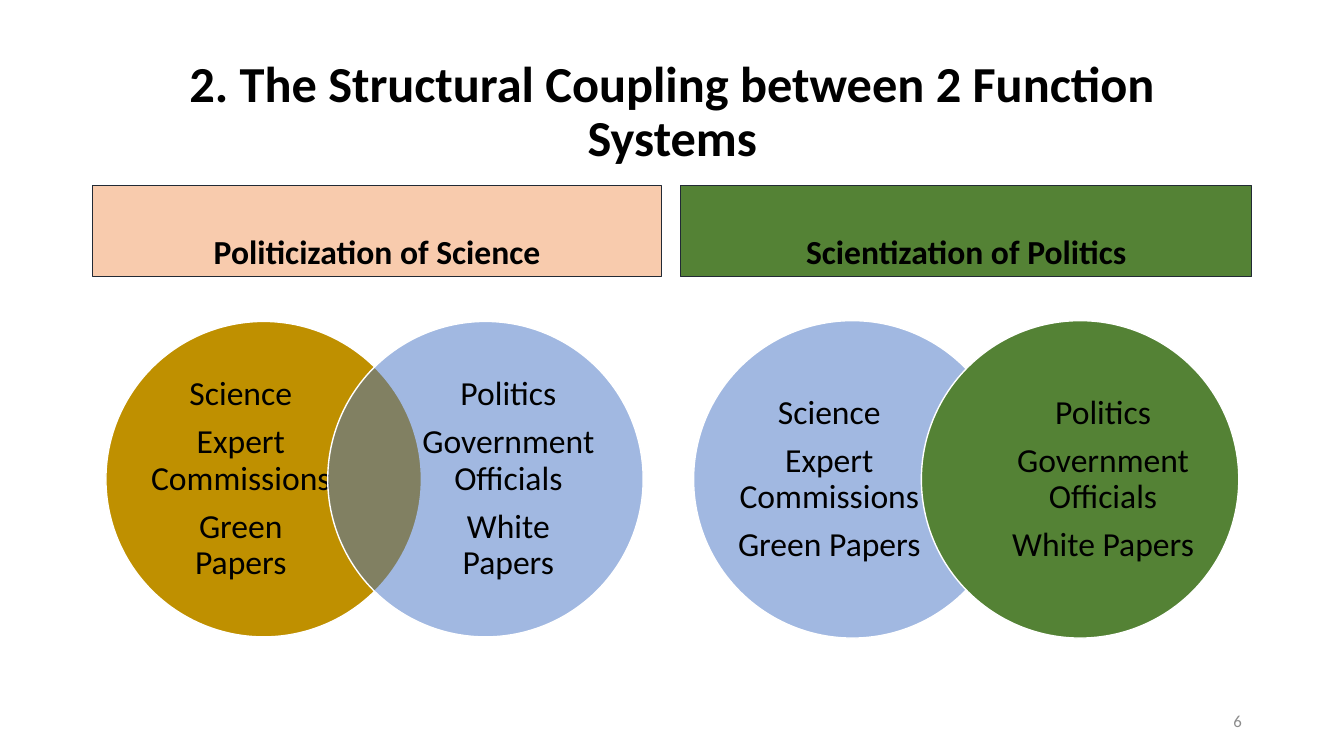
from lxml.etree import SubElement
from pptx import Presentation
from pptx.dml.color import RGBColor
from pptx.enum.shapes import MSO_SHAPE
from pptx.enum.text import MSO_ANCHOR, PP_ALIGN
from pptx.oxml.ns import qn
from pptx.util import Cm, Pt

FONT = "Calibri"
BLACK, WHITE, GREY = "000000", "FFFFFF", "8C8C8C"
PEACH, GREEN, GOLD, BLUE, NAVY = "F8CBAD", "548235", "BF9000", "4472C4", "222A35"

SCIENCE = ["Science", "Expert Commissions", "Green Papers"]
POLITICS = ["Politics", "Government Officials", "White Papers"]


def colour(value):
    return RGBColor.from_string(value)


def write(shape, lines, size, ink=BLACK, bold=False, align=PP_ALIGN.CENTER,
          anchor=MSO_ANCHOR.MIDDLE, after=0, spacing=0.9):
    frame = shape.text_frame
    frame.word_wrap = True
    frame.vertical_anchor = anchor
    for index, line in enumerate(lines):
        paragraph = frame.add_paragraph() if index else frame.paragraphs[0]
        paragraph.alignment = align
        paragraph.line_spacing = spacing
        paragraph.space_after = Pt(after)
        run = paragraph.add_run()
        run.text = line
        run.font.name, run.font.size, run.font.bold = FONT, Pt(size), bold
        run.font.color.rgb = colour(ink)


def add_text(slide, box, lines, size, **style):
    shape = slide.shapes.add_textbox(*(Cm(length) for length in box))
    write(shape, lines, size, **style)
    return shape


def add_filled(slide, kind, box, fill, line, line_width, opacity=100):
    shape = slide.shapes.add_shape(kind, *(Cm(length) for length in box))
    shape.shadow.inherit = False
    shape.fill.solid()
    shape.fill.fore_color.rgb = colour(fill)
    shape.line.color.rgb = colour(line)
    shape.line.width = Pt(line_width)
    if opacity < 100:
        fill_colour = shape.fill._xPr.find(qn("a:solidFill"))[0]
        SubElement(fill_colour, qn("a:alpha")).set("val", str(opacity * 1000))
    return shape


def add_heading(slide, box, text, fill):
    shape = add_filled(slide, MSO_SHAPE.RECTANGLE, box, fill, NAVY, 0.75)
    write(shape, [text], 24, bold=True, anchor=MSO_ANCHOR.BOTTOM)


def add_venn(slide, box, circles):
    """Two overlapping circles as high as the box, at its left and right ends."""
    left, top, width, diameter = box
    text_width, text_height = 0.575 * diameter, 0.763 * diameter
    inset = 0.14 * diameter  # from the outer edge of each circle to its text
    text_top = top + (diameter - text_height) / 2
    circle_lefts = (left, left + width - diameter)
    text_lefts = (left + inset, left + width - inset - text_width)
    for circle_left, text_left, (fill, opacity, lines) in zip(
            circle_lefts, text_lefts, circles):
        add_filled(slide, MSO_SHAPE.OVAL, (circle_left, top, diameter, diameter),
                   fill, WHITE, 1, opacity)
        label = add_text(slide, (text_left, text_top, text_width, text_height),
                         lines, 24, after=8.4)
        frame = label.text_frame
        frame.margin_left = frame.margin_right = 0
        frame.margin_top = frame.margin_bottom = 0


def main():
    presentation = Presentation()
    presentation.slide_width, presentation.slide_height = Cm(33.87), Cm(19.05)
    slide = presentation.slides.add_slide(presentation.slide_layouts[6])

    # Title
    add_text(slide, (2.34, 1.02, 29.21, 3.68),
             ["2. The Structural Coupling between 2 Function Systems"], 36, bold=True)

    # Column headings
    add_heading(slide, (2.34, 4.68, 14.33, 2.29), "Politicization of Science", PEACH)
    add_heading(slide, (17.15, 4.68, 14.4, 2.29), "Scientization of Politics", GREEN)

    # Coupled systems
    add_venn(slide, (2.67, 8.1, 13.54, 7.95),
             [(GOLD, 100, SCIENCE), (BLUE, 50, POLITICS)])
    add_venn(slide, (17.48, 8.08, 13.74, 8),
             [(BLUE, 50, SCIENCE), (GREEN, 100, POLITICS)])

    # Slide number
    add_text(slide, (23.93, 17.65, 7.62, 1.02), ["6"], 12, ink=GREY,
             align=PP_ALIGN.RIGHT, spacing=1.0)

    presentation.save("out.pptx")


if __name__ == "__main__":
    main()
